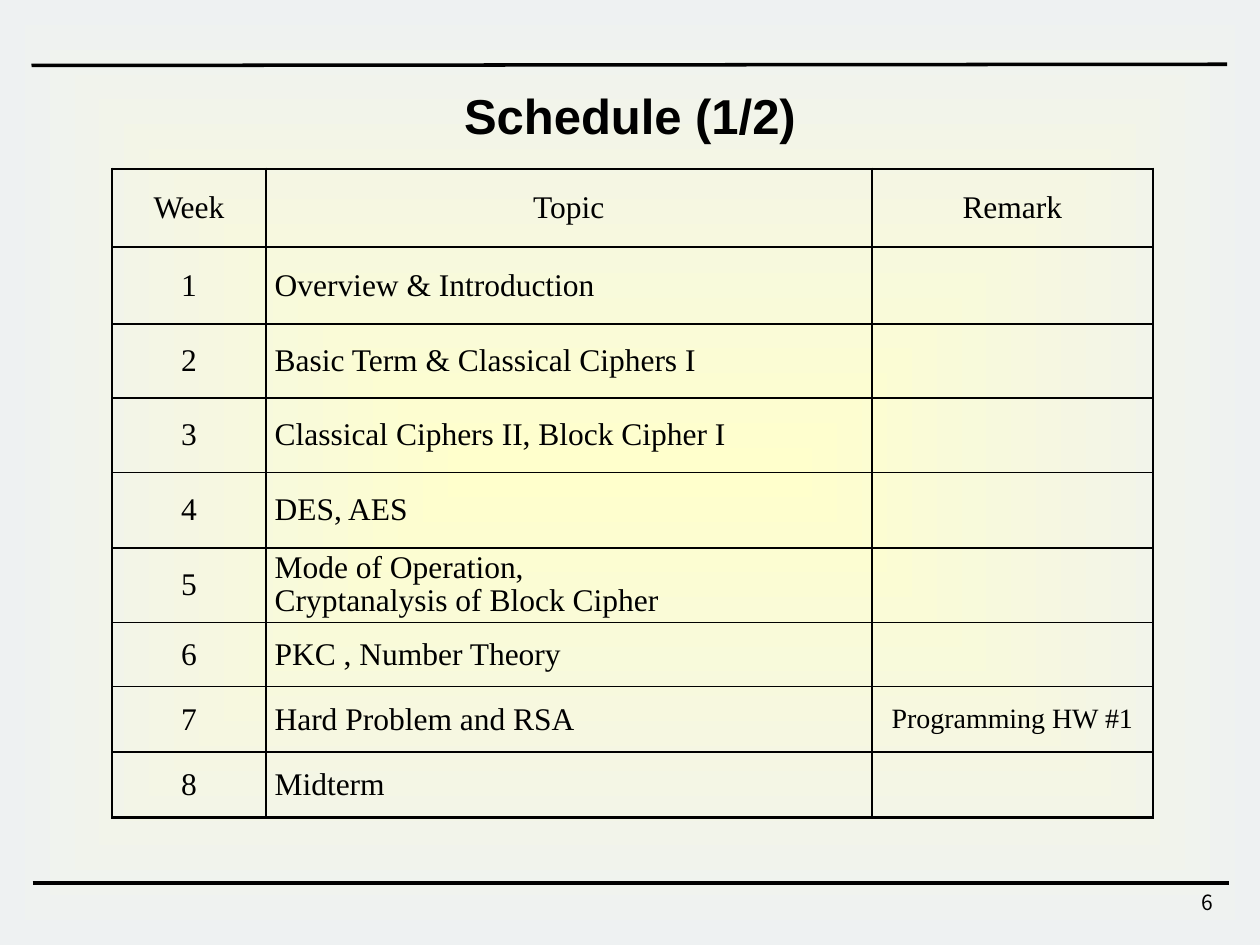
from dataclasses import dataclass

from lxml import etree
from pptx import Presentation, util as u
from pptx.dml.color import RGBColor
from pptx.enum import shapes, text
from pptx.oxml import parse_xml
from pptx.oxml.ns import nsdecls, qn

TITLE = "Schedule (1/2)"
PAGE = "6"
HEADER = ("Week", "Topic", "Remark")
TOPICS = [
    ["Overview & Introduction"],
    ["Basic Term & Classical Ciphers I"],
    ["Classical Ciphers II, Block Cipher I"],
    ["DES, AES"],
    ["Mode of Operation, ", "Cryptanalysis of Block Cipher"],
    ["PKC , Number Theory"],
    ["Hard Problem and RSA"],
    ["Midterm"],
]
REMARKS = {7: "Programming HW #1"}

COLUMNS = (1.22, 4.81, 2.23)
ROWS = (0.62, 0.61, 0.59, 0.59, 0.6, 0.59, 0.51, 0.52, 0.52)
RULES = [((0.25, 0.52), (9.74, 0.51)), ((0.26, 7.01), (9.75, 7.01))]
WIDTH, HEIGHT = 10, 7.5


@dataclass(frozen=True)
class Theme:
    ink: str = "000000"
    center: str = "FFFFCC"
    edge: str = "EEF1F2"
    title_font: str = "Arial"
    table_font: str = "Times New Roman"
    page_font: str = "Noto Sans CJK KR"
    title_size: int = 28
    table_size: int = 18
    remark_size: int = 16
    page_size: int = 12
    rule: float = 2
    frame: float = 1.5
    grid: float = 1


THEME = Theme()
CENTER, LEFT, RIGHT = text.PP_ALIGN.CENTER, text.PP_ALIGN.LEFT, text.PP_ALIGN.RIGHT


def inches(*values):
    return [u.Inches(value) for value in values]


def write(frame, lines, font, size, align, bold=False, spacing=None):
    for index, line in enumerate(lines):
        paragraph = frame.add_paragraph() if index else frame.paragraphs[0]
        paragraph.alignment = align
        paragraph.line_spacing = spacing
        run = paragraph.add_run()
        run.text = line
        run.font.name, run.font.size, run.font.bold = font, u.Pt(size), bold
        run.font.color.rgb = RGBColor.from_string(THEME.ink)


def add_backdrop(slide):
    backdrop = slide.shapes.add_shape(
        shapes.MSO_SHAPE.RECTANGLE, *inches(0, 0, WIDTH, HEIGHT))
    backdrop.shadow.inherit = False
    backdrop.line.fill.background()
    gradient = parse_xml(
        f'<a:gradFill {nsdecls("a")} rotWithShape="1"><a:gsLst>'
        f'<a:gs pos="0"><a:srgbClr val="{THEME.center}"/></a:gs>'
        f'<a:gs pos="100000"><a:srgbClr val="{THEME.edge}"/></a:gs></a:gsLst>'
        '<a:path path="shape"><a:fillToRect l="50000" t="50000" r="50000" b="50000"/>'
        '</a:path></a:gradFill>')
    backdrop.element.spPr.find(qn("a:prstGeom")).addnext(gradient)
    backdrop.element.getparent().insert(2, backdrop.element)


def add_rule(slide, start, end):
    rule = slide.shapes.add_connector(
        shapes.MSO_CONNECTOR.STRAIGHT, *inches(*start, *end))
    rule.line.color.rgb = RGBColor.from_string(THEME.ink)
    rule.line.width = u.Pt(THEME.rule)
    etree.SubElement(rule.element.spPr, qn("a:effectLst"))


def set_borders(cell, outer):
    """Draw the four borders, heavier on the sides named in outer (L, R, T, B)."""
    properties = cell._tc.get_or_add_tcPr()
    for index, side in enumerate("LRTB"):
        width = u.Pt(THEME.frame if side in outer else THEME.grid)
        properties.insert(index, parse_xml(
            f'<a:ln{side} {nsdecls("a")} w="{width}"><a:solidFill>'
            f'<a:srgbClr val="{THEME.ink}"/></a:solidFill></a:ln{side}>'))


def add_schedule(slide):
    content = [[[label] for label in HEADER]]
    for week, topic in enumerate(TOPICS, 1):
        content.append([[str(week)], topic, [REMARKS[week]] if week in REMARKS else []])

    schedule = slide.shapes.add_table(
        len(ROWS), len(COLUMNS),
        *inches(0.89, 1.34, sum(COLUMNS), sum(ROWS))).table
    schedule.first_row = schedule.horz_banding = False
    for column, width in zip(schedule.columns, COLUMNS):
        column.width = u.Inches(width)
    for row, height in zip(schedule.rows, ROWS):
        row.height = u.Inches(height)

    last_row, last_col = len(ROWS) - 1, len(COLUMNS) - 1
    for r, row in enumerate(content):
        for c, lines in enumerate(row):
            cell = schedule.cell(r, c)
            cell.fill.background()
            cell.vertical_anchor = text.MSO_ANCHOR.MIDDLE
            cell.margin_left = cell.margin_right = u.Inches(0.07)
            cell.margin_top = cell.margin_bottom = 0
            is_remark = r > 0 and c == last_col
            write(cell.text_frame, lines, THEME.table_font,
                  THEME.remark_size if is_remark else THEME.table_size,
                  LEFT if r > 0 and c == 1 else CENTER,
                  spacing=0.95 if len(lines) > 1 else None)
            edges = {"L": c == 0, "R": c == last_col, "T": r == 0, "B": r == last_row}
            set_borders(cell, [side for side, on_edge in edges.items() if on_edge])


def add_title(slide):
    title = slide.shapes.title
    title.left, title.top, title.width, title.height = inches(0, 0.69, WIDTH, 0.77)
    frame = title.text_frame
    frame.vertical_anchor = text.MSO_ANCHOR.TOP
    frame.auto_size = text.MSO_AUTO_SIZE.NONE
    frame.margin_left = frame.margin_right = u.Inches(0.09)
    frame.margin_top = frame.margin_bottom = u.Inches(0.04)
    write(frame, [TITLE], THEME.title_font, THEME.title_size, CENTER,
          bold=True, spacing=0.9)


def add_page_number(slide):
    page = slide.shapes.add_textbox(*inches(7.65, 7.01, 2.08, 0.33)).text_frame
    page.word_wrap = True
    write(page, [PAGE], THEME.page_font, THEME.page_size, RIGHT)


def main():
    deck = Presentation()
    deck.slide_width, deck.slide_height = inches(WIDTH, HEIGHT)
    slide = deck.slides.add_slide(deck.slide_layouts.get_by_name("Title Only"))
    add_backdrop(slide)
    for start, end in RULES:
        add_rule(slide, start, end)
    add_page_number(slide)
    add_schedule(slide)
    add_title(slide)
    deck.save("out.pptx")


if __name__ == "__main__":
    main()
